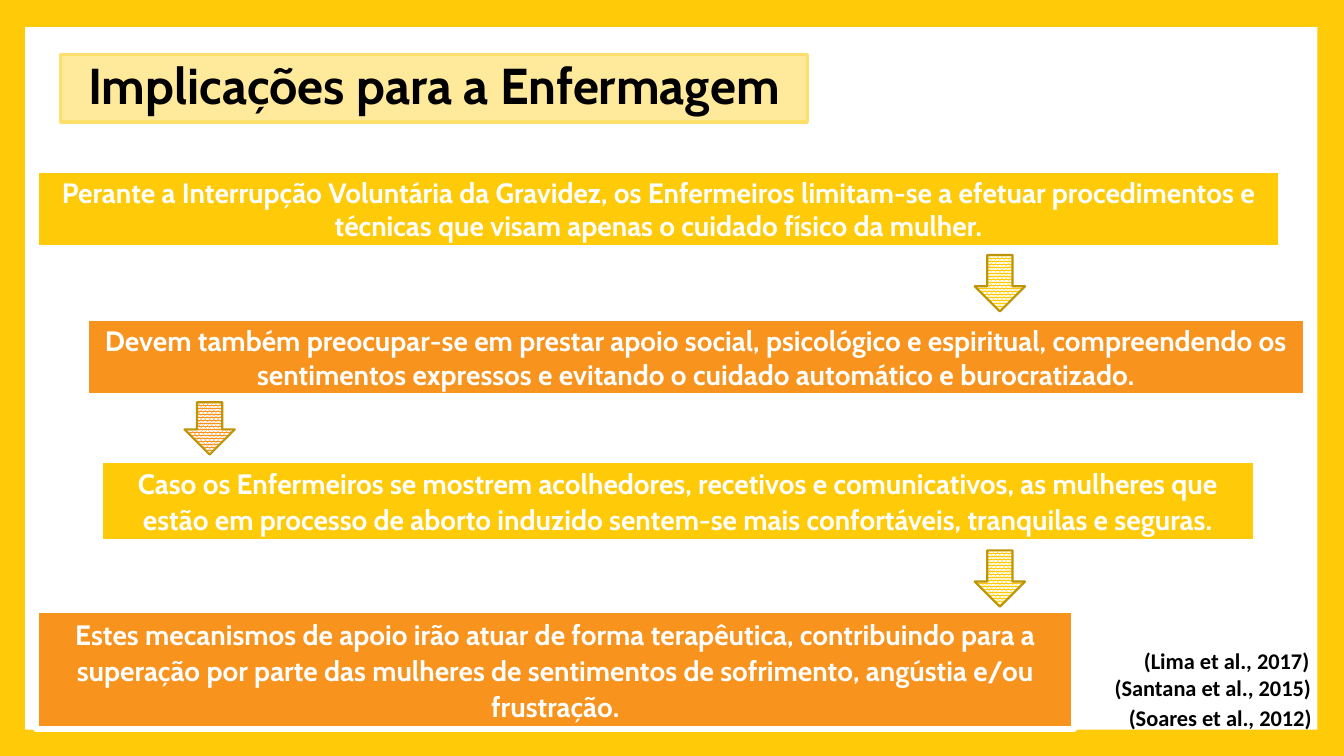
from dataclasses import dataclass

from pptx import Presentation
from pptx import util as u
from pptx.dml.color import RGBColor
from pptx.enum import dml, shapes, text

COLUMNS, ROWS = 160, 90
WIDTH, HEIGHT = u.Inches(13.333), u.Inches(7.5)


@dataclass(frozen=True)
class Theme:
    yellow: str = "FFCA08"
    orange: str = "F8931D"
    white: str = "FFFFFF"
    black: str = "000000"
    title_fill: str = "FFEA9C"
    title_line: str = "FFDF6B"
    arrow_line: str = "BD9506"
    heading_font: str = "Cabin"
    citation_font: str = "Calibri"
    title_size: int = 36
    body_size: int = 20
    citation_size: int = 16


THEME = Theme()

STATEMENTS = [
    ("Perante a Interrupção Voluntária da Gravidez, os Enfermeiros limitam-se a efetuar "
     "procedimentos e técnicas que visam apenas o cuidado físico da mulher.",
     (4.32, 20.28, 148.2, 9.24), THEME.yellow, {}),
    ("Devem também preocupar-se em prestar apoio social, psicológico e espiritual, "
     "compreendendo os sentimentos expressos e evitando o cuidado automático e burocratizado.",
     (10.2, 37.92, 145.32, 9.24), THEME.orange, {}),
    ("Caso os Enfermeiros se mostrem acolhedores, recetivos e comunicativos, as mulheres que "
     "estão em processo de aborto induzido sentem-se mais confortáveis, tranquilas e seguras.",
     (11.88, 54.72, 137.64, 9.84), THEME.yellow, {"spacing": 1.07, "after": 8}),
    ("Estes mecanismos de apoio irão atuar de forma terapêutica, contribuindo para a superação "
     "por parte das mulheres de sentimentos de sofrimento, angústia e/ou frustração.",
     (4.32, 72.6, 123.6, 14.16), THEME.orange, {"spacing": 1.07, "after": 8}),
]

ARROWS = [
    ((116.04, 30.36, 6, 6.72), THEME.yellow),
    ((21.96, 47.88, 6, 6.24), THEME.orange),
    ((116.04, 65.52, 6, 6.72), THEME.yellow),
]

CITATIONS = [
    ("(Lima et al., 2017)", (135, 76.44, 22.32, 4.44)),
    ("(Santana et al., 2015)", (131.52, 79.68, 26.04, 4.44)),
    ("(Soares et al., 2012)", (133.2, 83.28, 24.48, 4.44)),
]


def color(code):
    return RGBColor.from_string(code)


def place(area):
    left, top, width, height = area
    return (round(left * WIDTH / COLUMNS), round(top * HEIGHT / ROWS),
            round(width * WIDTH / COLUMNS), round(height * HEIGHT / ROWS))


def paint(shape, fill, line=None, weight=0):
    shape.fill.solid()
    shape.fill.fore_color.rgb = color(fill)
    outline(shape, line, weight)


def outline(shape, line, weight):
    if line is None:
        shape.line.fill.background()
    else:
        shape.line.color.rgb = color(line)
        shape.line.width = u.Pt(weight)


def write(shape, words, *, size, font, ink, align=text.PP_ALIGN.CENTER,
          anchor=text.MSO_ANCHOR.TOP, wrap=True, spacing=1.0, after=0,
          fit=text.MSO_AUTO_SIZE.SHAPE_TO_FIT_TEXT):
    frame = shape.text_frame
    frame.text = words
    frame.word_wrap = wrap
    frame.auto_size = fit
    frame.vertical_anchor = anchor
    paragraph = frame.paragraphs[0]
    paragraph.alignment = align
    paragraph.line_spacing = spacing
    paragraph.space_before = u.Pt(0)
    paragraph.space_after = u.Pt(after)
    run_font = paragraph.runs[0].font
    run_font.name = font
    run_font.size = u.Pt(size)
    run_font.bold = True
    run_font.color.rgb = color(ink)


def add_shape(slide, kind, area):
    shape = slide.shapes.add_shape(kind, *place(area))
    shape.shadow.inherit = False
    return shape


def add_panel(slide):
    panel = add_shape(slide, shapes.MSO_SHAPE.RECTANGLE, (3, 3.24, 153.84, 83.64))
    paint(panel, THEME.white)


def add_statement(slide, words, area, fill, paragraph_format):
    box = add_shape(slide, shapes.MSO_SHAPE.RECTANGLE, area)
    paint(box, fill, THEME.white, 4.25)
    write(box, words, size=THEME.body_size, font=THEME.heading_font,
          ink=THEME.white, **paragraph_format)


def add_arrow(slide, area, tint):
    arrow = add_shape(slide, shapes.MSO_SHAPE.DOWN_ARROW, area)
    arrow.fill.patterned()
    arrow.fill.pattern = dml.MSO_PATTERN.PERCENT_80
    arrow.fill.fore_color.rgb = color(tint)
    arrow.fill.back_color.rgb = color(THEME.white)
    outline(arrow, THEME.arrow_line, 1.5)


def add_citation(slide, words, area):
    box = slide.shapes.add_textbox(*place(area))
    write(box, words, size=THEME.citation_size, font=THEME.citation_font,
          ink=THEME.black, align=text.PP_ALIGN.LEFT, wrap=False)


def set_title(slide, words, area):
    title = slide.shapes.title
    title.left, title.top, title.width, title.height = place(area)
    paint(title, THEME.title_fill, THEME.title_line, 2.25)
    write(title, words, size=THEME.title_size, font=THEME.heading_font,
          ink=THEME.black, anchor=text.MSO_ANCHOR.MIDDLE, spacing=0.9,
          fit=text.MSO_AUTO_SIZE.NONE)
    slide.shapes.element.append(title.element)


def main():
    presentation = Presentation()
    presentation.slide_width, presentation.slide_height = WIDTH, HEIGHT
    slide = presentation.slides.add_slide(presentation.slide_layouts[5])
    slide.background.fill.solid()
    slide.background.fill.fore_color.rgb = color(THEME.yellow)
    add_panel(slide)
    for statement in STATEMENTS:
        add_statement(slide, *statement)
    for arrow in ARROWS:
        add_arrow(slide, *arrow)
    for citation in CITATIONS:
        add_citation(slide, *citation)
    set_title(slide, "Implicações para a Enfermagem", (7.2, 6.48, 88.92, 8.04))
    presentation.save("out.pptx")


if __name__ == "__main__":
    main()
